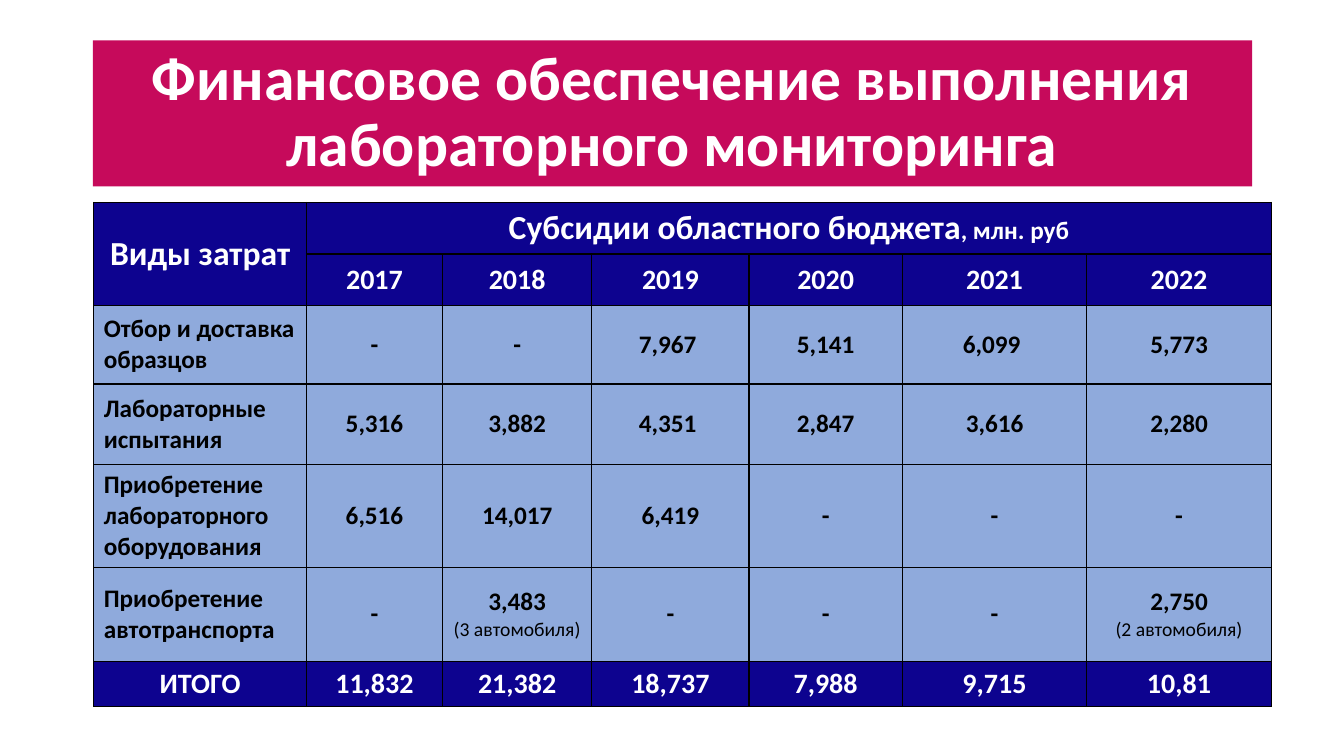
"""Build the slide on financing of laboratory monitoring."""
from lxml import etree
from pptx import Presentation
from pptx.dml.color import RGBColor
from pptx.enum import text
from pptx.oxml import ns
from pptx.util import Inches, Pt

FONT = "Calibri"
CRIMSON = RGBColor(0xC6, 0x0A, 0x5B)
NAVY = RGBColor(0x0D, 0x03, 0x8F)
SKY = RGBColor(0x8F, 0xAA, 0xDC)
WHITE = RGBColor(0xFF, 0xFF, 0xFF)
BLACK = RGBColor(0, 0, 0)

COLUMN_WIDTHS = [2.11, 1.35, 1.48, 1.56, 1.52, 1.83, 1.83]
ROW_HEIGHTS = [0.51, 0.51, 0.78, 0.8, 1.02, 0.93, 0.45]
YEARS = ["2017", "2018", "2019", "2020", "2021", "2022"]
EXPENSES = [
    ["Отбор и доставка образцов", "-", "-", "7,967 ", "5,141", "6,099 ", "5,773"],
    ["Лабораторные испытания", "5,316", "3,882", "4,351 ", "2,847", "3,616", "2,280"],
    ["Приобретение лабораторного оборудования", "6,516", "14,017", "6,419", "-", "-", "-"],
    ["Приобретение автотранспорта", "-", "3,483", "-", "-", "-", "2,750"],
]
VEHICLE_ROW = 5
VEHICLE_NOTES = {2: "(3 автомобиля)", 6: "(2 автомобиля)"}
TOTALS = ["ИТОГО", "11,832", "21,382", "18,737", "7,988", "9,715", "10,81"]


def add_run(paragraph, wording, size, color, bold=True):
    """Append one formatted run to a paragraph."""
    run = paragraph.add_run()
    run.text = wording
    run.font.name = FONT
    run.font.size = Pt(size)
    run.font.bold = bold
    run.font.color.rgb = color


def add_title(slide, wording):
    """Place the heading on its crimson band."""
    heading = slide.shapes.title
    heading.left, heading.top = Inches(0.92), Inches(0.4)
    heading.width, heading.height = Inches(11.5), Inches(1.45)
    heading.fill.solid()
    heading.fill.fore_color.rgb = CRIMSON
    frame = heading.text_frame
    frame.auto_size = text.MSO_AUTO_SIZE.NONE
    frame.word_wrap = True
    frame.vertical_anchor = text.MSO_ANCHOR.MIDDLE
    line = frame.paragraphs[0]
    line.alignment = text.PP_ALIGN.CENTER
    line.line_spacing = 0.9
    add_run(line, wording, 44, WHITE)


def style_cell(cell, background):
    """Fill a cell, centre it vertically and outline it in black."""
    properties = cell._tc.get_or_add_tcPr()
    for side in ("a:lnL", "a:lnR", "a:lnT", "a:lnB"):
        border = etree.SubElement(properties, ns.qn(side), w=str(Pt(1)))
        paint = etree.SubElement(border, ns.qn("a:solidFill"))
        etree.SubElement(paint, ns.qn("a:srgbClr"), val=str(BLACK))
    cell.fill.solid()
    cell.fill.fore_color.rgb = background
    cell.vertical_anchor = text.MSO_ANCHOR.MIDDLE


def write_cell(cell, wording, size, color, align=text.PP_ALIGN.CENTER):
    """Write bold wording in a cell and return its paragraph."""
    line = cell.text_frame.paragraphs[0]
    line.alignment = align
    add_run(line, wording, size, color)
    return line


def add_budget_grid(slide):
    """Add an outlined grid with navy header and total rows."""
    budget = slide.shapes.add_table(
        len(ROW_HEIGHTS), len(COLUMN_WIDTHS), Inches(0.93), Inches(2.01),
        Inches(sum(COLUMN_WIDTHS)), Inches(sum(ROW_HEIGHTS))).table
    for column, width in zip(budget.columns, COLUMN_WIDTHS):
        column.width = Inches(width)
    last_row = len(ROW_HEIGHTS) - 1
    for index, (row, height) in enumerate(zip(budget.rows, ROW_HEIGHTS)):
        row.height = Inches(height)
        for cell in row.cells:
            style_cell(cell, NAVY if index in (0, 1, last_row) else SKY)
    return budget


def fill_header(budget):
    """Write the merged headings and the years."""
    budget.cell(0, 0).merge(budget.cell(1, 0))
    budget.cell(0, 1).merge(budget.cell(0, len(YEARS)))
    write_cell(budget.cell(0, 0), "Виды затрат", 24, WHITE)
    subsidies = write_cell(budget.cell(0, 1), "Субсидии областного бюджета", 24, WHITE)
    add_run(subsidies, ", млн. руб", 18, WHITE)
    for column, year in enumerate(YEARS, start=1):
        write_cell(budget.cell(1, column), year, 20, WHITE)


def fill_expenses(budget):
    """Write the expense rows, vehicle notes and totals."""
    for row, (expense, *amounts) in enumerate(EXPENSES, start=2):
        write_cell(budget.cell(row, 0), expense, 18, BLACK, text.PP_ALIGN.LEFT)
        for column, amount in enumerate(amounts, start=1):
            write_cell(budget.cell(row, column), amount, 18, BLACK)
    for column, note in VEHICLE_NOTES.items():
        line = budget.cell(VEHICLE_ROW, column).text_frame.add_paragraph()
        line.alignment = text.PP_ALIGN.CENTER
        add_run(line, note, 14, BLACK, bold=False)
    for column, total in enumerate(TOTALS):
        write_cell(budget.cell(len(ROW_HEIGHTS) - 1, column), total, 20, WHITE)


def main():
    """Assemble and save the presentation."""
    deck = Presentation()
    deck.slide_width, deck.slide_height = Inches(13.33), Inches(7.5)
    slide = deck.slides.add_slide(deck.slide_layouts.get_by_name("Title Only"))
    add_title(slide, "Финансовое обеспечение выполнения лабораторного мониторинга")
    budget = add_budget_grid(slide)
    fill_header(budget)
    fill_expenses(budget)
    deck.save("out.pptx")


if __name__ == "__main__":
    main()
